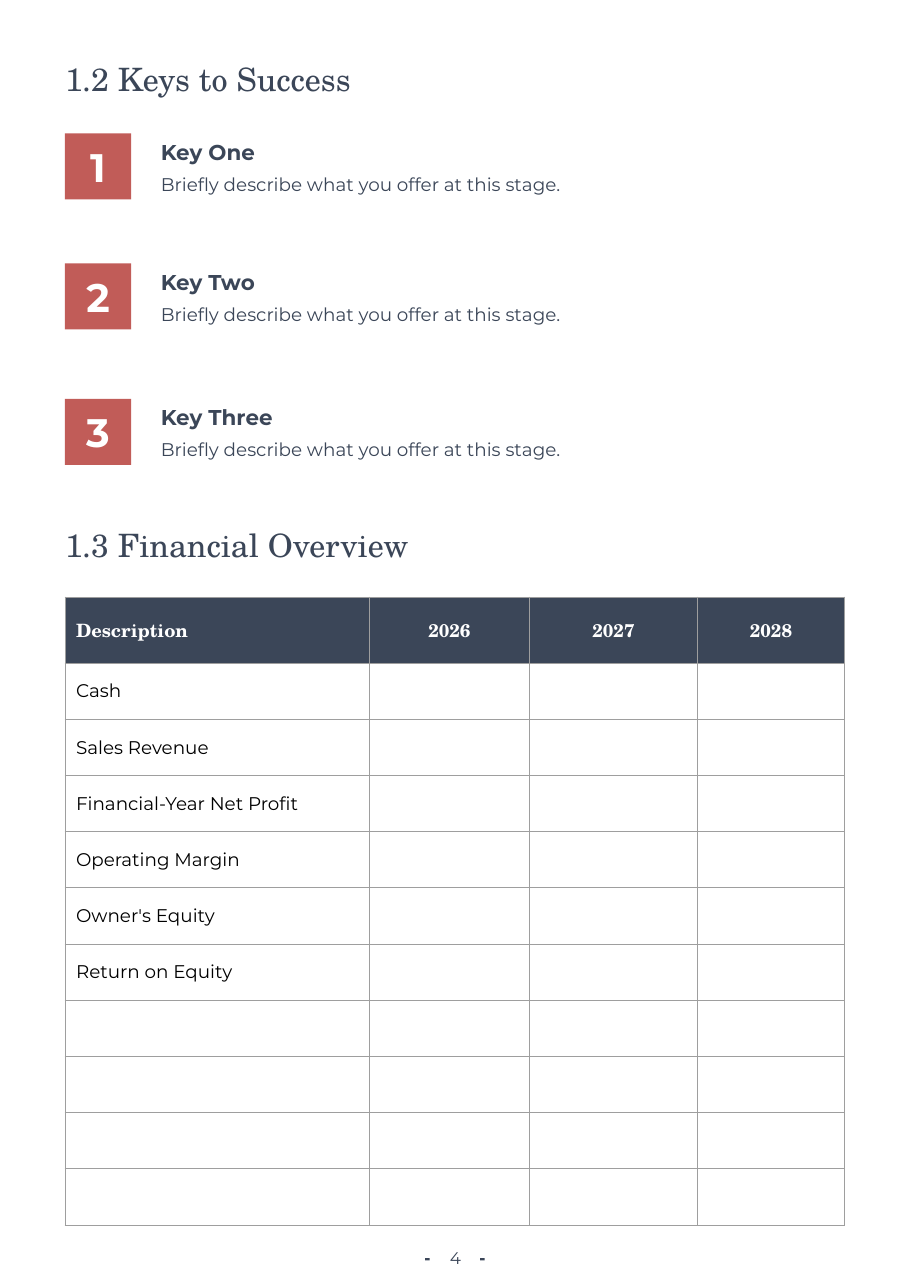
from lxml.etree import SubElement
from pptx import Presentation
from pptx.dml.color import RGBColor
from pptx.enum.shapes import MSO_SHAPE as Shape
from pptx.enum.text import MSO_ANCHOR as Anchor, MSO_AUTO_SIZE as AutoSize, PP_ALIGN as Align
from pptx.oxml.ns import qn
from pptx.util import Pt

EMU_PER_PX = 9144
NAVY = RGBColor(0x3B, 0x46, 0x58)
RED = RGBColor(0xC1, 0x5C, 0x58)
GREY = RGBColor(0x9E, 0x9E, 0x9E)
WHITE = RGBColor(0xFF, 0xFF, 0xFF)
BLACK = RGBColor(0x00, 0x00, 0x00)
SERIF, SANS = "TeX Gyre Schola", "Montserrat"

HEADING = {"name": SERIF, "size": Pt(21), "bold": False, "color": NAVY}
NUMBER = {"name": SANS, "size": Pt(26), "bold": True, "color": WHITE}
KEY_NAME = {"name": SANS, "size": Pt(14), "bold": True, "color": NAVY}
KEY_DETAIL = {"name": SANS, "size": Pt(12), "bold": False, "color": NAVY}
PAGE_NUMBER = {"name": SANS, "size": Pt(11), "bold": False, "color": NAVY}
TABLE_HEAD = {"name": SERIF, "size": Pt(12), "bold": True, "color": WHITE}
TABLE_BODY = {"name": SANS, "size": Pt(12), "bold": False, "color": BLACK}

LEFT, KEY_LEFT, TEXT_WIDTH = 59, 146, 709
KEYS = [("Key One", 121), ("Key Two", 239), ("Key Three", 362)]
DETAIL = "Briefly describe what you offer at this stage."
COLUMN_WIDTHS = [276, 146, 152, 134]
HEAD_HEIGHT, ROW_HEIGHT, EMPTY_ROWS = 60, 51, 4
HEADERS = ["Description", "2026", "2027", "2028"]
ITEMS = ["Cash", "Sales Revenue", "Financial-Year Net Profit",
         "Operating Margin", "Owner's Equity", "Return on Equity"]


def px(*lengths):
    """Turn px lengths into EMU."""
    return [length * EMU_PER_PX for length in lengths]


def write(frame, text, style, align=Align.LEFT):
    """Put one styled paragraph into a text frame."""
    paragraph = frame.paragraphs[0]
    paragraph.alignment = align
    run = paragraph.add_run()
    run.text = text
    for key, value in style.items():
        if key == "color":
            run.font.color.rgb = value
        else:
            setattr(run.font, key, value)


def format_box(shape, text, style, align=Align.LEFT):
    """Give a text shape no insets and fill in its text."""
    frame = shape.text_frame
    layout = {"margin_left": 0, "margin_top": 0, "margin_right": 0, "margin_bottom": 0,
              "word_wrap": True, "vertical_anchor": Anchor.TOP,
              "auto_size": AutoSize.SHAPE_TO_FIT_TEXT}
    for key, value in layout.items():
        setattr(frame, key, value)
    write(frame, text, style, align)


def add_text(shapes, box, text, style, align=Align.LEFT):
    """Add a text box."""
    format_box(shapes.add_textbox(*px(*box)), text, style, align)


def add_rectangle(shapes, box, color):
    """Add a plain filled rectangle."""
    shape = shapes.add_shape(Shape.RECTANGLE, *px(*box))
    shape.shadow.inherit = False
    shape.fill.solid()
    shape.fill.fore_color.rgb = color
    shape.line.fill.background()
    return shape


def add_title(slide, box, text):
    """Place and format the title placeholder."""
    title = slide.shapes.title
    for key, value in zip(("left", "top", "width", "height"), px(*box)):
        setattr(title, key, value)
    format_box(title, text, HEADING)


def add_key(slide, number, name, top):
    """Add a numbered square with its name and description."""
    square = add_rectangle(slide.shapes, (LEFT, top, 60, 60), RED)
    square.text_frame.vertical_anchor = Anchor.MIDDLE
    write(square.text_frame, str(number), NUMBER, Align.CENTER)
    group = slide.shapes.add_group_shape()
    add_text(group.shapes, (KEY_LEFT, top + 5, 520, 24), name, KEY_NAME)
    add_text(group.shapes, (KEY_LEFT, top + 36, 622, 20), DETAIL, KEY_DETAIL)


def add_borders(cell):
    """Draw a thin grey line on all sides of a cell."""
    properties = cell._tc.get_or_add_tcPr()
    for side in ("lnL", "lnR", "lnT", "lnB"):
        line = SubElement(properties, qn(f"a:{side}"), w=str(Pt(0.75)))
        fill = SubElement(line, qn("a:solidFill"))
        SubElement(fill, qn("a:srgbClr"), val=str(GREY))


def add_financial_table(slide, top):
    """Add the financial overview table."""
    rows = [HEADERS] + [[item, "", "", ""] for item in ITEMS] + [[""] * 4] * EMPTY_ROWS
    heights = [HEAD_HEIGHT] + [ROW_HEIGHT] * (len(rows) - 1)
    frame = slide.shapes.add_table(len(rows), len(HEADERS),
                                   *px(LEFT, top, sum(COLUMN_WIDTHS), sum(heights)))
    table = frame.table
    for column, width in zip(table.columns, px(*COLUMN_WIDTHS)):
        column.width = width
    for row, height in zip(table.rows, px(*heights)):
        row.height = height
    for row_index, texts in enumerate(rows):
        is_head = row_index == 0
        for column_index, text in enumerate(texts):
            cell = table.cell(row_index, column_index)
            cell.vertical_anchor = Anchor.MIDDLE
            add_borders(cell)
            cell.fill.solid()
            cell.fill.fore_color.rgb = NAVY if is_head else WHITE
            if text:
                write(cell.text_frame, text, TABLE_HEAD if is_head else TABLE_BODY,
                      Align.CENTER if column_index else Align.LEFT)


def add_page_number(slide, number):
    """Add the page number between two dashes."""
    group = slide.shapes.add_group_shape()
    add_text(group.shapes, (396, 1132, 35, 19), str(number), PAGE_NUMBER, Align.CENTER)
    for left in (386, 436):
        add_rectangle(group.shapes, (left, 1142, 4, 2), NAVY)


def main():
    """Build the page and save it."""
    presentation = Presentation()
    presentation.slide_width, presentation.slide_height = px(827, 1169)
    slide = presentation.slides.add_slide(presentation.slide_layouts[5])
    add_title(slide, (LEFT, 54, TEXT_WIDTH, 35), "1.2 Keys to Success")
    for number, (name, top) in enumerate(KEYS, start=1):
        add_key(slide, number, name, top)
    add_text(slide.shapes, (LEFT, 477, TEXT_WIDTH, 35), "1.3 Financial Overview", HEADING)
    add_financial_table(slide, 542)
    add_page_number(slide, 4)
    presentation.save("out.pptx")


if __name__ == "__main__":
    main()
